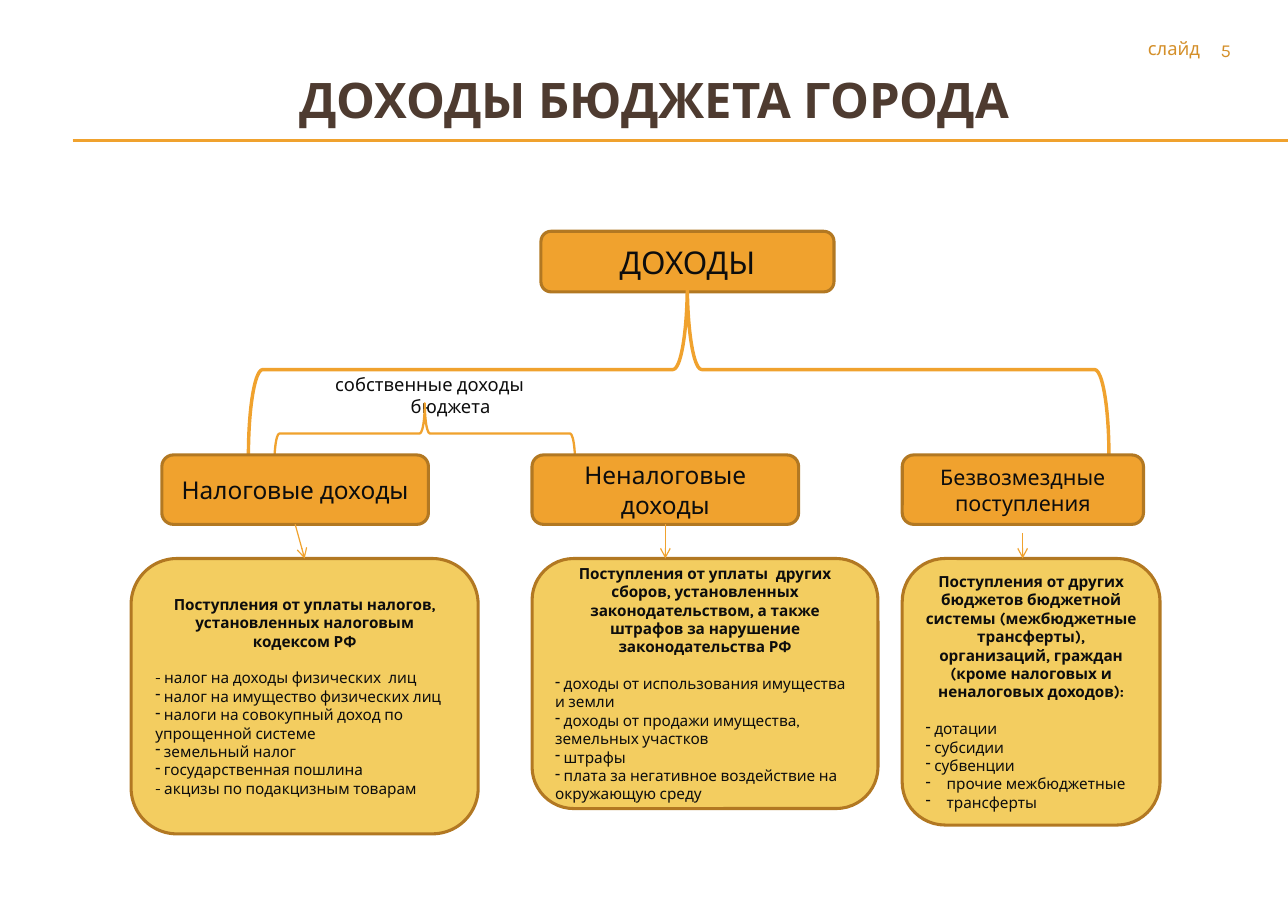
from dataclasses import dataclass

import pptx
import pptx.dml.color
import pptx.enum.shapes
import pptx.enum.text
import pptx.oxml.ns
import pptx.presentation
import pptx.shapes.autoshape
import pptx.shapes.connector
import pptx.slide
import pptx.text.text
import pptx.util
from lxml import etree

SLIDE_WIDTH = pptx.util.Inches(11.69)
SLIDE_HEIGHT = pptx.util.Inches(8.27)
ALIGN = pptx.enum.text.PP_ALIGN
ANCHOR = pptx.enum.text.MSO_ANCHOR
SHAPE = pptx.enum.shapes.MSO_SHAPE


@dataclass(frozen=True)
class Theme:
    font: str = "Karla"
    heading: str = "4E3B30"
    ink: str = "0D0D0D"
    accent: str = "F0A22E"
    edge: str = "B27822"
    card: str = "F3CD60"
    page: str = "D48F29"
    heading_size: float = 32
    root_size: float = 20.5
    branch_size: float = 16
    narrow_size: float = 14
    label_size: float = 12
    card_size: float = 10
    edge_width: float = 2
    rule_width: float = 0.75
    arrow_width: float = 0.79


@dataclass(frozen=True)
class Box:
    """Left, top, width and height in percent of the slide."""
    left: float
    top: float
    width: float
    height: float

    def emu(self) -> tuple[int, int, int, int]:
        return across(self.left), down(self.top), across(self.width), down(self.height)


@dataclass(frozen=True)
class Entry:
    text: str
    bullet: bool = True
    hanging: float = 0


@dataclass(frozen=True)
class Income:
    name: str
    name_size: float
    name_width: float
    card: Box
    summary: str
    entries: tuple[Entry, ...]
    arrow_start: tuple[float, float]
    arrow_end: tuple[float, float]
    leaves_name: bool = True
    reaches_card: bool = False


@dataclass(frozen=True)
class Brace:
    box: Box
    width: float
    tip: float


THEME = Theme()
COLUMNS = [round(12.57 + 28.74 * i, 2) for i in range(3)]
BRANCH_TOP, BRANCH_HEIGHT, CARD_TOP = 49.94, 7.62, 61.31
BRANCH_BOTTOM = BRANCH_TOP + BRANCH_HEIGHT

INCOMES = (
    Income("Налоговые доходы", THEME.branch_size, 20.7, Box(10.18, CARD_TOP, 26.95, 30.23),
           "Поступления от уплаты налогов, установленных налоговым кодексом РФ",
           (Entry("- налог на доходы физических  лиц", bullet=False),
            Entry(" налог на имущество физических лиц"),
            Entry(" налоги на совокупный доход по упрощенной системе"),
            Entry(" земельный налог"),
            Entry(" государственная пошлина"),
            Entry("- акцизы по подакцизным товарам", bullet=False)),
           (22.92, BRANCH_BOTTOM), (23.65, CARD_TOP), reaches_card=True),
    Income("Неналоговые доходы", THEME.branch_size, 20.7, Box(COLUMNS[1], CARD_TOP, 26.86, 27.45),
           "Поступления от уплаты  других сборов, установленных законодательством, "
           "а также штрафов за нарушение законодательства РФ",
           (Entry(" доходы от использования имущества и земли"),
            Entry(" доходы от продажи имущества, земельных участков"),
            Entry(" штрафы"),
            Entry(" плата за негативное воздействие на окружающую среду")),
           (51.66, BRANCH_BOTTOM), (51.66, CARD_TOP)),
    Income("Безвозмездные поступления", THEME.narrow_size, 18.73, Box(COLUMNS[2], CARD_TOP, 20.02, 29.26),
           "Поступления от других бюджетов бюджетной системы (межбюджетные трансферты), "
           "организаций, граждан (кроме налоговых и неналоговых доходов):",
           (Entry(" дотации"), Entry(" субсидии"), Entry(" субвенции"),
            Entry("прочие межбюджетные", hanging=0.19),
            Entry("трансферты", hanging=0.19)),
           (79.4, 58.52), (79.4, CARD_TOP), leaves_name=False),
)
BRACES = (
    Brace(Box(21.3, 44.26, 23.35, 6.65), 1.5, 0.5),
    Brace(Box(19.29, 31.14, 66.81, 18.86), 2.25, 0.49),
)


def across(percent: float) -> int:
    return round(SLIDE_WIDTH * percent / 100)


def down(percent: float) -> int:
    return round(SLIDE_HEIGHT * percent / 100)


def rgb(value: str) -> pptx.dml.color.RGBColor:
    return pptx.dml.color.RGBColor.from_string(value)


def write(paragraph: pptx.text.text._Paragraph, text: str, size: float, color: str = THEME.ink,
          align: ALIGN = ALIGN.CENTER, bold: bool = False) -> None:
    paragraph.alignment = align
    run = paragraph.add_run()
    run.text = text
    run.font.name = THEME.font
    run.font.size = pptx.util.Pt(size)
    run.font.bold = bold
    run.font.color.rgb = rgb(color)


def set_bullet(paragraph: pptx.text.text._Paragraph, mark: str = "", hanging: float = 0) -> None:
    properties = paragraph._p.get_or_add_pPr()
    properties.set("marL", str(pptx.util.Inches(hanging)))
    properties.set("indent", str(pptx.util.Inches(-hanging)))
    bullet = etree.SubElement(properties, pptx.oxml.ns.qn("a:buChar" if mark else "a:buNone"))
    if mark:
        bullet.set("char", mark)


def place(shape: pptx.shapes.autoshape.Shape, box: Box) -> pptx.text.text.TextFrame:
    shape.left, shape.top, shape.width, shape.height = box.emu()
    frame = shape.text_frame
    frame.word_wrap = True
    frame.auto_size = pptx.enum.text.MSO_AUTO_SIZE.NONE
    frame.vertical_anchor = ANCHOR.MIDDLE
    return frame


def add_panel(slide: pptx.slide.Slide, box: Box, fill: str) -> pptx.shapes.autoshape.Shape:
    panel = slide.shapes.add_shape(SHAPE.ROUNDED_RECTANGLE, *box.emu())
    panel.shadow.inherit = False
    panel.fill.solid()
    panel.fill.fore_color.rgb = rgb(fill)
    panel.line.color.rgb = rgb(THEME.edge)
    panel.line.width = pptx.util.Pt(THEME.edge_width)
    panel.text_frame.word_wrap = True
    panel.text_frame.vertical_anchor = ANCHOR.MIDDLE
    return panel


def add_line(slide: pptx.slide.Slide, start: tuple[float, float], end: tuple[float, float],
             width: float, arrow: bool = False) -> pptx.shapes.connector.Connector:
    line = slide.shapes.add_connector(pptx.enum.shapes.MSO_CONNECTOR.STRAIGHT, across(start[0]),
                                      down(start[1]), across(end[0]), down(end[1]))
    line.line.color.rgb = rgb(THEME.accent)
    line.line.width = pptx.util.Pt(width)
    if arrow:
        etree.SubElement(line.line._get_or_add_ln(), pptx.oxml.ns.qn("a:tailEnd")).set("type", "arrow")
    etree.SubElement(line._element.spPr, pptx.oxml.ns.qn("a:effectLst"))
    return line


def add_brace(slide: pptx.slide.Slide, brace: Brace) -> None:
    left, top, width, height = brace.box.emu()
    shift = (width - height) // 2
    shape = slide.shapes.add_shape(SHAPE.LEFT_BRACE, left + shift, top - shift, height, width)
    shape.rotation = 90
    shape.adjustments[1] = brace.tip
    shape.shadow.inherit = False
    shape.fill.background()
    shape.line.color.rgb = rgb(THEME.accent)
    shape.line.width = pptx.util.Pt(brace.width)


def add_income(slide: pptx.slide.Slide, income: Income, column: float) -> None:
    name = add_panel(slide, Box(column, BRANCH_TOP, income.name_width, BRANCH_HEIGHT), THEME.accent)
    write(name.text_frame.paragraphs[0], income.name, income.name_size)
    card = add_panel(slide, income.card, THEME.card)
    summary = card.text_frame.paragraphs[0]
    write(summary, income.summary, THEME.card_size, bold=True)
    summary.space_after = pptx.util.Pt(12)
    for entry in income.entries:
        line = card.text_frame.add_paragraph()
        write(line, entry.text, THEME.card_size, align=ALIGN.LEFT)
        set_bullet(line, "-" if entry.bullet else "", entry.hanging)
    arrow = add_line(slide, income.arrow_start, income.arrow_end, THEME.arrow_width, arrow=True)
    if income.leaves_name:
        arrow.begin_connect(name, 2)
    if income.reaches_card:
        arrow.end_connect(card, 0)


def add_page_text(slide: pptx.slide.Slide, text: str, box: Box) -> None:
    frame = slide.shapes.add_textbox(*box.emu()).text_frame
    frame.word_wrap = True
    write(frame.paragraphs[0], text, THEME.label_size, THEME.page, ALIGN.RIGHT)


def main() -> None:
    deck = pptx.Presentation()
    deck.slide_width, deck.slide_height = SLIDE_WIDTH, SLIDE_HEIGHT
    slide = deck.slides.add_slide(deck.slide_layouts[1])
    for level in (15.36, 15.48):
        add_line(slide, (5.65, level), (100, level), THEME.rule_width)
    heading = place(slide.shapes.title, Box(10.18, 5.32, 81.27, 11.12))
    write(heading.paragraphs[0], "ДОХОДЫ БЮДЖЕТА ГОРОДА", THEME.heading_size, THEME.heading, bold=True)
    total = add_panel(slide, Box(42, 25.39, 22.75, 6.65), THEME.accent)
    write(total.text_frame.paragraphs[0], "ДОХОДЫ", THEME.root_size)
    for brace in BRACES:
        add_brace(slide, brace)
    own_income = place(slide.placeholders[1], Box(21.98, 40.51, 22.75, 5.68)).paragraphs[0]
    write(own_income, "собственные доходы бюджета", THEME.label_size)
    own_income.space_before = pptx.util.Pt(2.4)
    set_bullet(own_income, hanging=0.38)
    for income, column in zip(INCOMES, COLUMNS):
        add_income(slide, income, column)
    add_page_text(slide, "5", Box(88.11, 3.75, 8.3, 3.63))
    add_page_text(slide, "слайд", Box(62.36, 3.51, 31.65, 4.23))
    deck.save("out.pptx")


if __name__ == "__main__":
    main()
